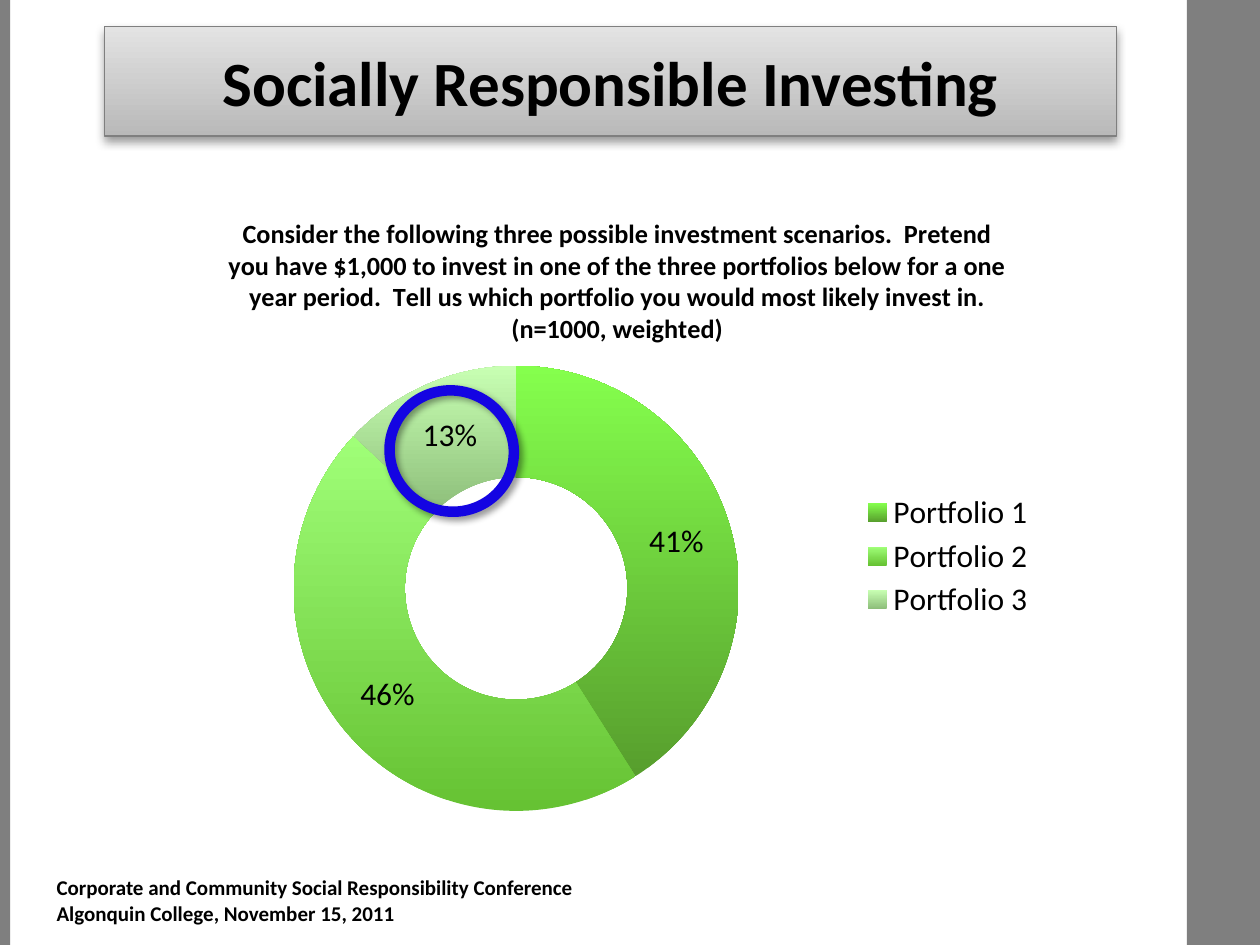
import typing

import lxml.etree
import pptx
import pptx.chart.data
import pptx.dml.color
import pptx.enum.chart
import pptx.enum.shapes
import pptx.enum.text
import pptx.oxml
import pptx.oxml.ns
import pptx.util


class Theme(typing.NamedTuple):
    font: str = "Calibri"
    ink: str = "000000"
    rail: str = "7F7F7F"
    banner: tuple = ("B9B9B9", "E3E3E3")
    ring: str = "1404E2"
    portfolios: tuple = (
        ("579E2D", "85FF4D"),
        ("66C233", "A0FF78"),
        ("8DBE7A", "C8FFB3"),
    )
    heading: int = 36
    labels: int = 18
    question: int = 15
    footer: int = 12


class Box(typing.NamedTuple):
    left: float
    top: float
    width: float
    height: float

    def inner(self, left, top, width, height):
        """Return a box inside this one, given as shares of its size."""
        return Box(self.left + left * self.width, self.top + top * self.height,
                   width * self.width, height * self.height)

    def lengths(self):
        return [pptx.util.Inches(value) for value in self]


THEME = Theme()
SLIDE = Box(0, 0, 10, 7.5)
ALIGN = pptx.enum.text.PP_ALIGN


def rgb(value):
    return pptx.dml.color.RGBColor.from_string(value)


def style_font(font, size, bold=False):
    font.name = THEME.font
    font.size = pptx.util.Pt(size)
    font.bold = bold
    font.color.rgb = rgb(THEME.ink)


def fill_gradient(fill, colours):
    """Blend two colours from the bottom edge to the top edge."""
    fill.gradient()
    fill.gradient_angle = 90
    for stop, colour in zip(fill.gradient_stops, colours):
        stop.color.rgb = rgb(colour)


def add_text(page, box, text, size, bold=True, align=ALIGN.LEFT):
    frame = page.shapes.add_textbox(*box.lengths()).text_frame
    frame.word_wrap = True
    frame.vertical_anchor = pptx.enum.text.MSO_ANCHOR.MIDDLE
    para = frame.paragraphs[0]
    para.alignment = align
    span = para.add_run()
    span.text = text
    style_font(span.font, size, bold)


def add_shape(page, box, kind, line=None, line_width=0.75):
    shape = page.shapes.add_shape(kind, *box.lengths())
    shape.shadow.inherit = False
    if line:
        shape.line.color.rgb = rgb(line)
        shape.line.width = pptx.util.Pt(line_width)
    else:
        shape.line.fill.background()
    return shape


def cast_shadow(shape, blur, distance, angle):
    effects = shape._element.spPr.find(pptx.oxml.ns.qn("a:effectLst"))
    effects.append(pptx.oxml.parse_xml(
        f'<a:outerShdw {pptx.oxml.ns.nsdecls("a")} blurRad="{pptx.util.Pt(blur)}" '
        f'dist="{pptx.util.Pt(distance)}" dir="{angle * 60000}" rotWithShape="0">'
        '<a:srgbClr val="000000"><a:alpha val="40000"/></a:srgbClr></a:outerShdw>'))


def place_in_chart(element, before, **shares):
    """Give a piece of the chart a fixed layout, set ahead of the named sibling."""
    for old in element.findall(pptx.oxml.ns.qn("c:layout")):
        element.remove(old)
    layout = lxml.etree.Element(pptx.oxml.ns.qn("c:layout"))
    manual = lxml.etree.SubElement(layout, pptx.oxml.ns.qn("c:manualLayout"))
    target = {"layoutTarget": "inner"} if before == "doughnutChart" else {}
    settings = {**target, "xMode": "edge", "yMode": "edge", **shares}
    for name, value in settings.items():
        lxml.etree.SubElement(manual, pptx.oxml.ns.qn(f"c:{name}"), val=str(value))
    element.find(pptx.oxml.ns.qn(f"c:{before}")).addprevious(layout)


def draw_rails(page, box):
    for rail in (box.inner(0.942, 0, 0.058, 1), box.inner(0, 0, 0.008, 1)):
        shape = add_shape(page, rail, pptx.enum.shapes.MSO_SHAPE.RECTANGLE)
        shape.fill.solid()
        shape.fill.fore_color.rgb = rgb(THEME.rail)


def draw_banner(page, box):
    shape = add_shape(page, box, pptx.enum.shapes.MSO_SHAPE.RECTANGLE, line=THEME.rail)
    fill_gradient(shape.fill, THEME.banner)
    cast_shadow(shape, blur=5.2, distance=3, angle=90)
    add_text(page, box, "Socially Responsible Investing", THEME.heading, align=ALIGN.CENTER)


def draw_portfolio_chart(page, box):
    data = pptx.chart.data.CategoryChartData()
    data.categories = ["Portfolio 1", "Portfolio 2", "Portfolio 3"]
    data.add_series("Series 1", (41, 46, 13))
    chart = page.shapes.add_chart(
        pptx.enum.chart.XL_CHART_TYPE.DOUGHNUT, *box.lengths(), data).chart
    style_font(chart.font, THEME.labels)

    chart.has_title = True
    span = chart.chart_title.text_frame.paragraphs[0].add_run()
    span.text = (
        "Consider the following three possible investment scenarios.  Pretend you have "
        "$1,000 to invest in one of the three portfolios below for a one year period.  "
        "Tell us which portfolio you would most likely invest in. (n=1000, weighted)")
    style_font(span.font, THEME.question, bold=True)

    chart.has_legend = True
    chart.legend.position = pptx.enum.chart.XL_LEGEND_POSITION.RIGHT
    chart.legend.include_in_layout = False
    style_font(chart.legend.font, THEME.labels)

    plot = chart.plots[0]
    plot.vary_by_categories = True
    plot.has_data_labels = True
    labels = plot.data_labels
    labels.show_percentage = True
    labels.show_value = False
    labels.number_format = "0%"
    labels.number_format_is_linked = False
    style_font(labels.font, THEME.labels)
    for index, colours in enumerate(THEME.portfolios):
        point = plot.series[0].points[index].format
        fill_gradient(point.fill, colours)
        point.line.fill.background()

    plot_area = chart._chartSpace.chart.plotArea
    place_in_chart(plot_area, "doughnutChart", x=0.18, y=0.28, w=0.45, h=0.69)
    place_in_chart(chart.legend._element, "overlay", x=0.75, y=0.47, w=0.18, h=0.21)
    place_in_chart(chart.chart_title._element, "overlay", x=0.11, y=0.04)
    plot_area.find(".//" + pptx.oxml.ns.qn("c:holeSize")).set("val", "50")


def draw_ring(page, box):
    ring = add_shape(page, box, pptx.enum.shapes.MSO_SHAPE.OVAL,
                     line=THEME.ring, line_width=6)
    ring.fill.background()
    ring.rotation = 20.4
    cast_shadow(ring, blur=4, distance=3, angle=45)


def draw_footer(page, box):
    add_text(page, box, "Corporate and Community Social Responsibility Conference "
             "Algonquin College, November 15, 2011", THEME.footer)


def main():
    deck = pptx.Presentation()
    deck.slide_width = pptx.util.Inches(SLIDE.width)
    deck.slide_height = pptx.util.Inches(SLIDE.height)
    page = deck.slides.add_slide(deck.slide_layouts[6])
    draw_rails(page, SLIDE)
    draw_banner(page, Box(0.83, 0.21, 8.03, 0.87))
    draw_footer(page, Box(0.35, 6.98, 4.65, 0.33))
    draw_portfolio_chart(page, Box(0.91, 1.47, 7.87, 5.12))
    draw_ring(page, Box(3.09, 3.1, 0.99, 0.96))
    deck.save("out.pptx")


if __name__ == "__main__":
    main()
